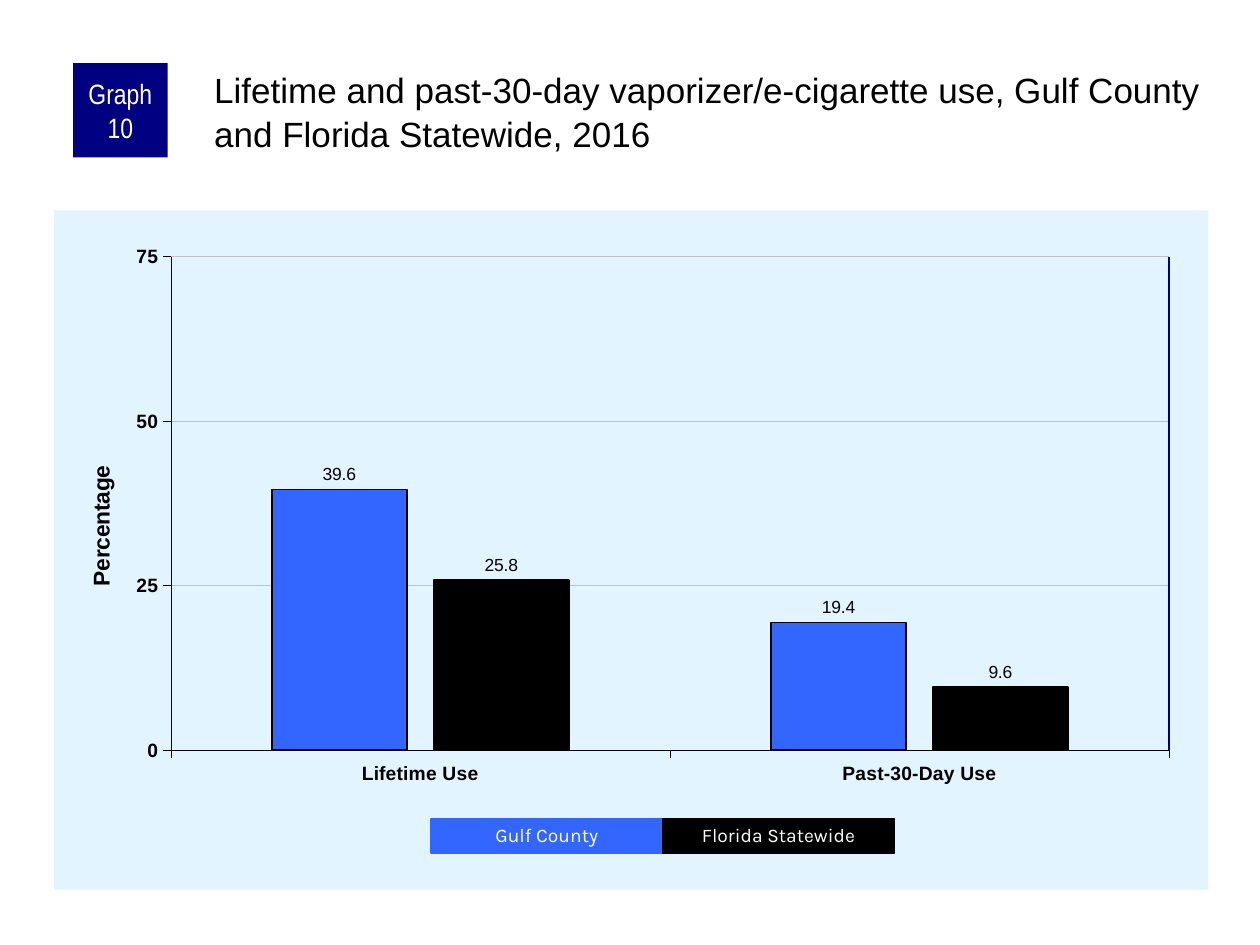
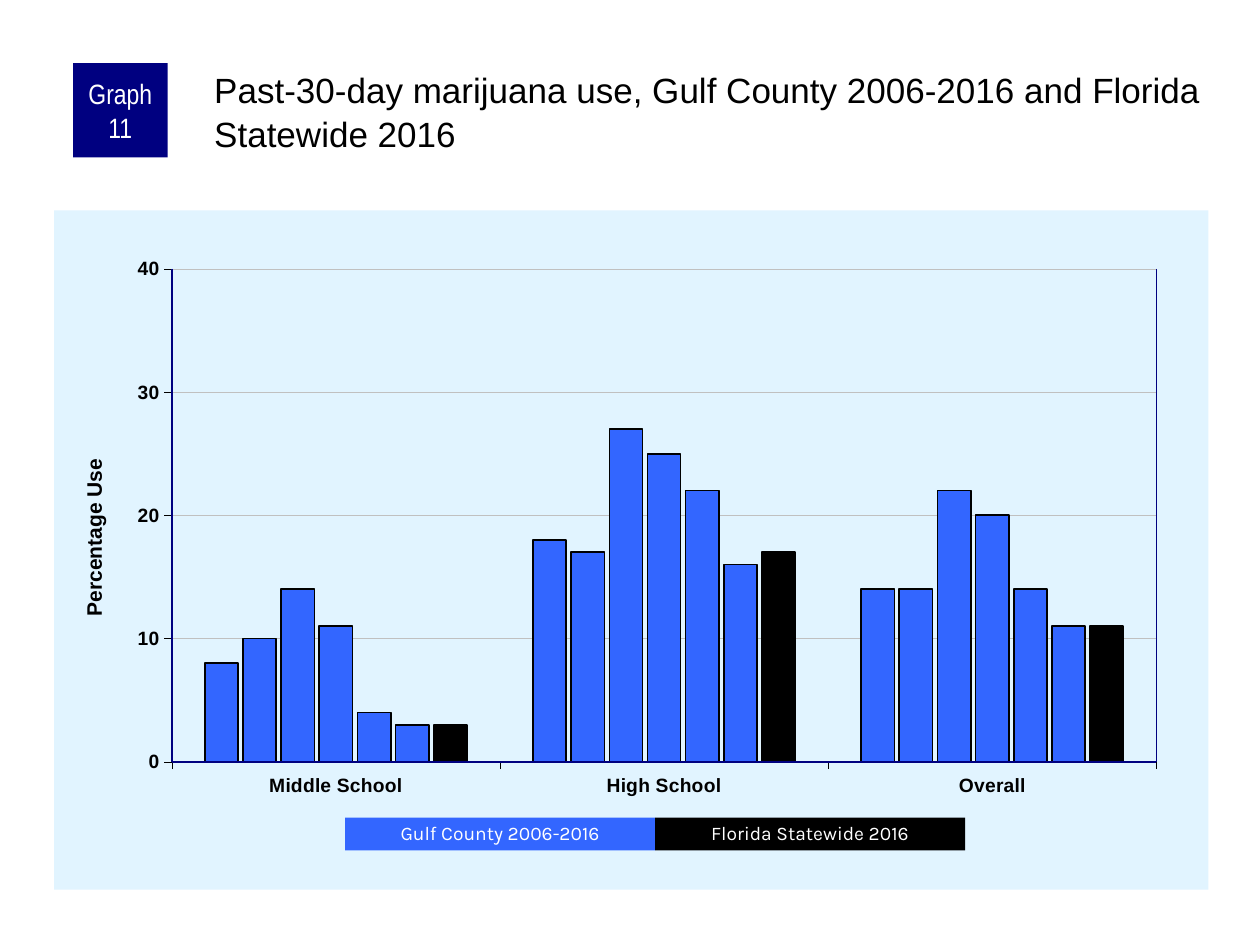
from lxml import etree
from pptx import Presentation
from pptx.chart.data import CategoryChartData
from pptx.dml.color import RGBColor
from pptx.enum import chart as ch, shapes, text
from pptx.oxml import parse_xml
from pptx.oxml.ns import qn
from pptx.util import Inches, Pt

theme = {
    "navy": RGBColor(0x00, 0x00, 0x80),
    "blue": RGBColor(0x33, 0x66, 0xFF),
    "black": RGBColor(0, 0, 0),
    "white": RGBColor(0xFF, 0xFF, 0xFF),
    "grid": RGBColor(0xC0, 0xC0, 0xC0),
    "panel": "E1F4FF",
    "body": "Arial", "narrow": "Arial Narrow", "key": "Karla",
    "title_size": 20, "badge_size": 16, "key_size": 11,
    "axis_size": 11, "label_size": 10,
}

# Chart panel, shared by both slides: left, top, width, height
PANEL = (0.43, 1.67, 9.16, 5.39)

graphs = [
    {
        "badge": "Graph 10",
        "title": "Lifetime and past-30-day vaporizer/e-cigarette use, "
                 "Gulf County and Florida Statewide, 2016",
        "categories": ["Lifetime Use", "Past-30-Day Use"],
        "county": [(39.6, 19.4)],
        "state": (25.8, 9.6),
        "labels": True, "font_size": 11.5,
        "axis_title": "Percentage", "axis_title_size": 13,
        "axis_title_at": (0.025, 0.37),
        "maximum": 75, "step": 25, "gap": 150, "overlap": -20,
        "plot": (0.101, 0.068, 0.865, 0.727),
        "frame_sides": ["right"],
        "key": ["Gulf County", "Florida Statewide"],
        "key_at": (3.42, 6.5, 1.84, 0.27), "key_line": 0.75,
    },
    {
        "badge": "Graph 11",
        "title": "Past-30-day marijuana use, Gulf County 2006-2016 "
                 "and Florida Statewide 2016",
        "categories": ["Middle School", "High School", "Overall"],
        "county": [(8, 18, 14), (10, 17, 14), (14, 27, 22),
                   (11, 25, 20), (4, 22, 14), (3, 16, 11)],
        "state": (3, 17, 11),
        "labels": False, "font_size": 8,
        "axis_title": "Percentage Use", "axis_title_size": 12,
        "axis_title_at": (0.02, 0.36),
        "maximum": 40, "step": 10, "gap": 200, "overlap": -15,
        "plot": (0.102, 0.086, 0.853, 0.726),
        "frame_sides": ["left", "bottom", "right"],
        "key": ["Gulf County 2006-2016", "Florida Statewide 2016"],
        "key_at": (2.74, 6.49, 2.46, 0.26), "key_line": 0,
    },
]


def format_font(font, size, name, color, bold=False):
    values = {"size": Pt(size), "name": name, "bold": bold}
    for attribute, value in values.items():
        setattr(font, attribute, value)
    font.color.rgb = color


def set_layout(parent, **values):
    """Place a chart part by fractions of the chart area."""
    layout = parent.find(qn("c:layout"))
    if layout is None:
        layout = etree.Element(qn("c:layout"))
        parent.insert(0, layout)
    manual = etree.SubElement(layout, qn("c:manualLayout"))
    for tag, value in values.items():
        etree.SubElement(manual, qn("c:" + tag)).set("val", str(value))


prs = Presentation()
prs.slide_width, prs.slide_height = Inches(10), Inches(7.5)

for graph in graphs:
    slide = prs.slides.add_slide(prs.slide_layouts.get_by_name("Title Only"))

    # Title
    title = slide.shapes.title
    title.left, title.top, title.width, title.height = map(
        Inches, (1.67, 0.5, 7.92, 0.83))
    title.text = graph["title"]
    frame_format = {
        "margin_left": Inches(0.03), "margin_top": Inches(0.03),
        "margin_right": 0, "margin_bottom": 0, "word_wrap": True,
        "auto_size": text.MSO_AUTO_SIZE.NONE,
        "vertical_anchor": text.MSO_ANCHOR.TOP,
    }
    for attribute, value in frame_format.items():
        setattr(title.text_frame, attribute, value)
    heading = title.text_frame.paragraphs[0]
    heading.alignment = text.PP_ALIGN.LEFT
    heading.line_spacing = 1.05
    format_font(heading.runs[0].font, theme["title_size"], theme["body"],
                theme["black"])

    # Chart data
    data = CategoryChartData()
    data.categories = graph["categories"]
    for number, values in enumerate(graph["county"] + [graph["state"]], 1):
        data.add_series(f"Series {number}", values)
    chart = slide.shapes.add_chart(
        ch.XL_CHART_TYPE.COLUMN_CLUSTERED, *map(Inches, PANEL), data).chart
    chart.has_title = False
    chart.has_legend = False
    format_font(chart.font, graph["font_size"], theme["body"], theme["black"])

    # Panel fill and plot position
    chart.element.find(qn("c:txPr")).addprevious(parse_xml(
        '<c:spPr xmlns:c="http://schemas.openxmlformats.org/drawingml/2006/chart" '
        'xmlns:a="http://schemas.openxmlformats.org/drawingml/2006/main">'
        f'<a:solidFill><a:srgbClr val="{theme["panel"]}"/></a:solidFill>'
        '<a:ln><a:noFill/></a:ln></c:spPr>'))
    plot_x, plot_y, plot_w, plot_h = graph["plot"]
    set_layout(chart.element.find(".//" + qn("c:plotArea")),
               layoutTarget="inner", xMode="edge", yMode="edge",
               x=plot_x, y=plot_y, w=plot_w, h=plot_h)

    # Columns
    columns = chart.plots[0]
    columns.vary_by_categories = False
    columns.gap_width, columns.overlap = graph["gap"], graph["overlap"]
    for series in columns.series:
        is_state = series.name == f"Series {len(graph['county']) + 1}"
        series.format.fill.solid()
        series.format.fill.fore_color.rgb = theme["black" if is_state else "blue"]
        series.format.line.color.rgb = theme["black"]
        series.format.line.width = Pt(1)
        series.invert_if_negative = False
        if graph["labels"]:
            labels = series.data_labels
            labels.show_value = True
            labels.position = ch.XL_LABEL_POSITION.OUTSIDE_END
            labels.number_format = "0.0"
            labels.number_format_is_linked = False
            format_font(labels.font, theme["label_size"], theme["body"],
                        theme["black"])

    # Axes
    for axis in (chart.category_axis, chart.value_axis):
        axis.major_tick_mark = ch.XL_TICK_MARK.OUTSIDE
        axis.minor_tick_mark = ch.XL_TICK_MARK.NONE
        axis.format.line.color.rgb = theme["black"]
        axis.format.line.width = Pt(0.25)
        format_font(axis.tick_labels.font, theme["axis_size"], theme["body"],
                    theme["black"], bold=True)
    percent = chart.value_axis
    percent.minimum_scale, percent.maximum_scale = 0, graph["maximum"]
    percent.major_unit = graph["step"]
    percent.tick_labels.number_format = "0"
    percent.tick_labels.number_format_is_linked = False
    percent.has_major_gridlines = True
    percent.major_gridlines.format.line.color.rgb = theme["grid"]
    percent.major_gridlines.format.line.width = Pt(0.25)
    caption = percent.axis_title.text_frame
    caption.text = graph["axis_title"]
    format_font(caption.paragraphs[0].runs[0].font, graph["axis_title_size"],
                theme["body"], theme["black"], bold=True)
    caption_x, caption_y = graph["axis_title_at"]
    title_xml = percent.axis_title._element
    title_xml.find(".//" + qn("a:bodyPr")).set("rot", "-5400000")
    set_layout(title_xml, xMode="edge", yMode="edge", x=caption_x, y=caption_y)

    # Navy edges of the plot
    left = PANEL[0] + plot_x * PANEL[2]
    top = PANEL[1] + plot_y * PANEL[3]
    right, bottom = left + plot_w * PANEL[2], top + plot_h * PANEL[3]
    edges = {
        "left": (left, top, left, bottom),
        "bottom": (left, bottom, right, bottom),
        "right": (right, top, right, bottom),
    }
    for side in graph["frame_sides"]:
        edge = slide.shapes.add_connector(
            shapes.MSO_CONNECTOR.STRAIGHT, *map(Inches, edges[side]))
        edge.line.color.rgb = theme["navy"]
        edge.line.width = Pt(1)
        etree.SubElement(edge._element.spPr, qn("a:effectLst"))

    # Number badge and the two halves of the colour key
    key_x, key_y, key_w, key_h = graph["key_at"]
    boxes = [(graph["badge"], (0.58, 0.5, 0.75, 0.75), "navy", "narrow",
              theme["badge_size"], 0, 1.0)]
    for position, (words, color) in enumerate(zip(graph["key"], ("blue", "black"))):
        boxes.append((words, (key_x + position * key_w, key_y, key_w, key_h),
                      color, "key", theme["key_size"], graph["key_line"], 0.9))
    for words, place, color, font, size, line, spacing in boxes:
        box = slide.shapes.add_shape(
            shapes.MSO_SHAPE.RECTANGLE, *map(Inches, place))
        box.shadow.inherit = False
        box.fill.solid()
        box.fill.fore_color.rgb = theme[color]
        if line:
            box.line.color.rgb = theme[color]
            box.line.width = Pt(line)
        else:
            box.line.fill.background()
        box_format = {
            "text": words, "word_wrap": True,
            "margin_left": Inches(0.05), "margin_right": Inches(0.05),
            "margin_top": 0, "margin_bottom": 0,
            "vertical_anchor": text.MSO_ANCHOR.MIDDLE,
        }
        for attribute, value in box_format.items():
            setattr(box.text_frame, attribute, value)
        words_line = box.text_frame.paragraphs[0]
        words_line.alignment = text.PP_ALIGN.CENTER
        words_line.line_spacing = spacing
        format_font(words_line.runs[0].font, size, theme[font], theme["white"])

prs.save("out.pptx")
